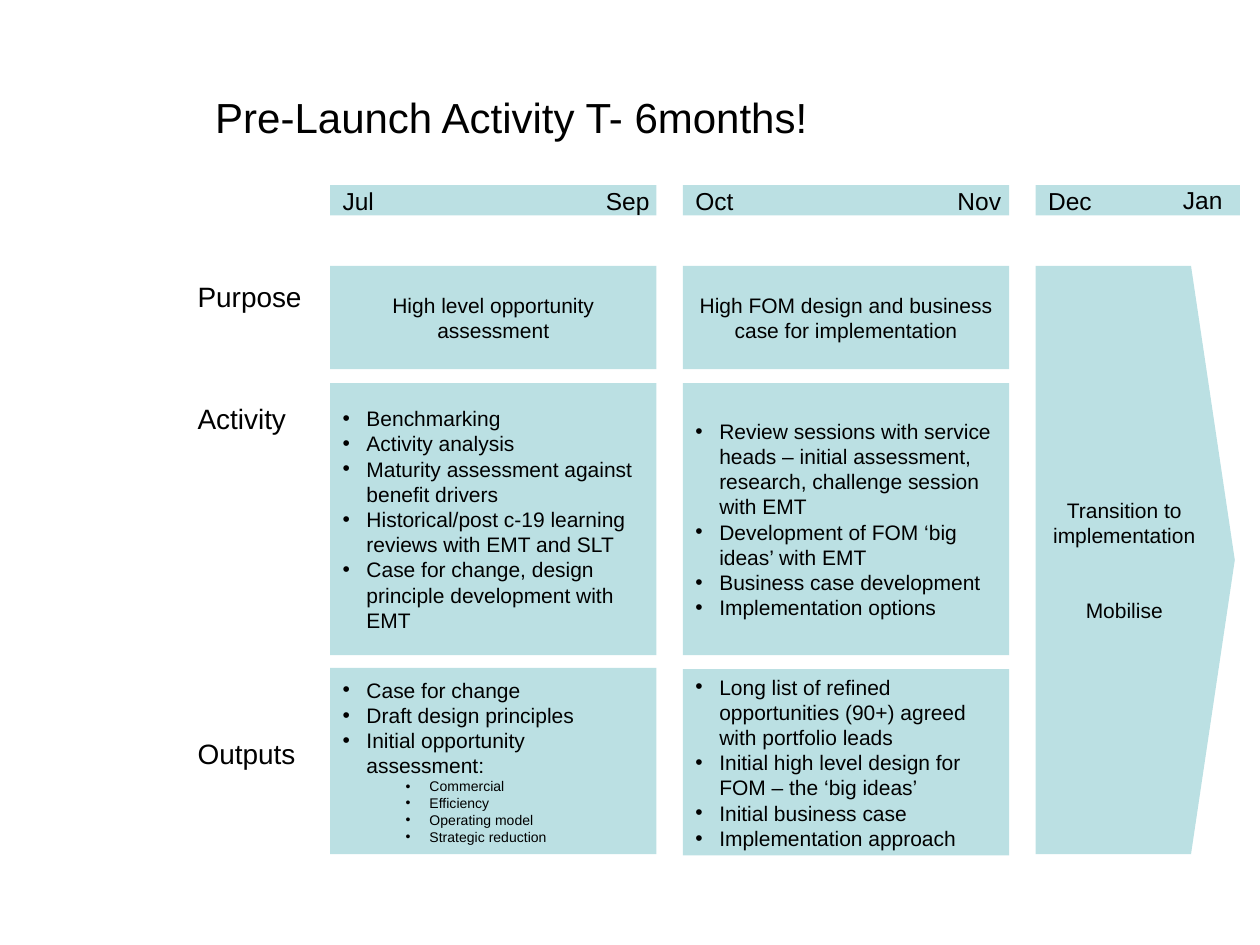
from pptx import Presentation
from pptx.dml.color import RGBColor as Rgb
from pptx.enum.shapes import MSO_SHAPE as Shape
from pptx.enum.text import MSO_ANCHOR as Anchor, PP_ALIGN as Align
from pptx.oxml.ns import qn
from pptx.util import Inches, Pt
from lxml.etree import SubElement

COLORS = {"panel": "BBE0E3", "text": "000000"}
COLUMN_LEFTS = [2.62, 5.42, 8.22]
PANEL_WIDTH = 2.59
MONTHS = [("Jul", 2.62, 1.43, 0.45), ("Sep", 4.71, 1.43, 0.55),
          ("Oct", 5.42, 1.43, 0.51), ("Nov", 7.5, 1.43, 0.55),
          ("Dec", 8.22, 1.43, 0.55), ("Jan", 9.29, 1.42, 0.52)]
ROW_LABELS = [("Purpose", 2.17, 1.04), ("Activity", 3.14, 0.91), ("Outputs", 5.8, 0.99)]
PURPOSES = ["High level opportunity assessment",
            "High FOM design and business case for implementation"]
ACTIVITIES = [
    ["Benchmarking", "Activity analysis",
     "Maturity assessment against benefit drivers",
     "Historical/post c-19 learning reviews with EMT and SLT",
     "Case for change, design principle development with EMT"],
    ["Review sessions with service heads – initial assessment, research, "
     "challenge session with EMT",
     "Development of FOM ‘big ideas’ with EMT",
     "Business case development", "Implementation options"],
]
OUTPUTS = [
    ["Case for change", "Draft design principles", "Initial opportunity assessment:"],
    ["Long list of refined opportunities (90+) agreed with portfolio leads",
     "Initial high level design for FOM – the ‘big ideas’",
     "Initial business case", "Implementation approach"],
]
OUTPUT_TOPS = [5.3, 5.31]
ASSESSMENT_AREAS = ["Commercial", "Efficiency", "Operating model", "Strategic reduction"]


class Roadmap:
    """Draws styled elements on the current slide."""

    def __init__(self, page, font="Arial"):
        self.page = page
        self.font = font

    def add_span(self, para, text, size):
        span = para.add_run()
        span.text = text
        span.font.name = self.font
        span.font.size = Pt(size)
        span.font.color.rgb = Rgb.from_string(COLORS["text"])

    def next_para(self, box):
        frame = box.text_frame
        first = frame.paragraphs[0]
        return frame.add_paragraph() if first.runs else first

    def label(self, text, left, top, width, height, size, wrap=False):
        box = self.page.shapes.add_textbox(
            Inches(left), Inches(top), Inches(width), Inches(height))
        box.text_frame.word_wrap = wrap
        box.text_frame.vertical_anchor = Anchor.MIDDLE if wrap else Anchor.TOP
        self.add_span(box.text_frame.paragraphs[0], text, size)

    def panel(self, left, top, width, height, kind=Shape.RECTANGLE):
        box = self.page.shapes.add_shape(
            kind, Inches(left), Inches(top), Inches(width), Inches(height))
        box.shadow.inherit = False
        box.fill.solid()
        box.fill.fore_color.rgb = Rgb.from_string(COLORS["panel"])
        box.line.fill.background()
        box.text_frame.word_wrap = True
        box.text_frame.vertical_anchor = Anchor.MIDDLE
        return box

    def centered(self, box, lines, gap=0):
        for index, text in enumerate(lines):
            para = self.next_para(box)
            para.alignment = Align.CENTER
            if index:
                para.space_before = Pt(gap)
            self.add_span(para, text, 12)

    def bullets(self, box, items, size=12, level=0):
        for text in items:
            para = self.next_para(box)
            para.alignment = Align.LEFT
            para.level = level
            props = para._p.get_or_add_pPr()
            props.set("marL", str(Inches(0.19 + 0.5 * level)))
            props.set("indent", str(Inches(-0.19)))
            SubElement(props, qn("a:buFont")).set("typeface", self.font)
            SubElement(props, qn("a:buChar")).set("char", "•")
            self.add_span(para, text, size)


def main():
    deck = Presentation()
    deck.slide_width, deck.slide_height = Inches(10), Inches(7.5)
    roadmap = Roadmap(deck.slides.add_slide(deck.slide_layouts[6]))

    roadmap.label("Pre-Launch Activity T- 6months!", 1.61, 0.3, 7.89, 1.25, 24, wrap=True)
    for left, width in zip(COLUMN_LEFTS, [PANEL_WIDTH, PANEL_WIDTH, 1.62]):
        roadmap.panel(left, 1.47, width, 0.24)
    for month, left, top, width in MONTHS:
        roadmap.label(month, left, top, width, 0.34, 14)
    for name, top, width in ROW_LABELS:
        roadmap.label(name, 1.47, top, width, 0.37, 16)

    for left, purpose in zip(COLUMN_LEFTS, PURPOSES):
        roadmap.centered(roadmap.panel(left, 2.11, PANEL_WIDTH, 0.82), [purpose])
    for left, activities in zip(COLUMN_LEFTS, ACTIVITIES):
        roadmap.bullets(roadmap.panel(left, 3.04, PANEL_WIDTH, 2.16), activities)
    output_boxes = []
    for left, top, outputs in zip(COLUMN_LEFTS, OUTPUT_TOPS, OUTPUTS):
        box = roadmap.panel(left, top, PANEL_WIDTH, 1.48)
        roadmap.bullets(box, outputs)
        output_boxes.append(box)
    roadmap.bullets(output_boxes[0], ASSESSMENT_AREAS, size=8, level=1)

    arrow = roadmap.panel(COLUMN_LEFTS[2], 2.11, 1.58, 4.67, Shape.PENTAGON)
    arrow.adjustments[0] = 0.22
    roadmap.centered(arrow, ["Transition to implementation", "Mobilise"], gap=28)

    deck.save("out.pptx")


if __name__ == "__main__":
    main()
